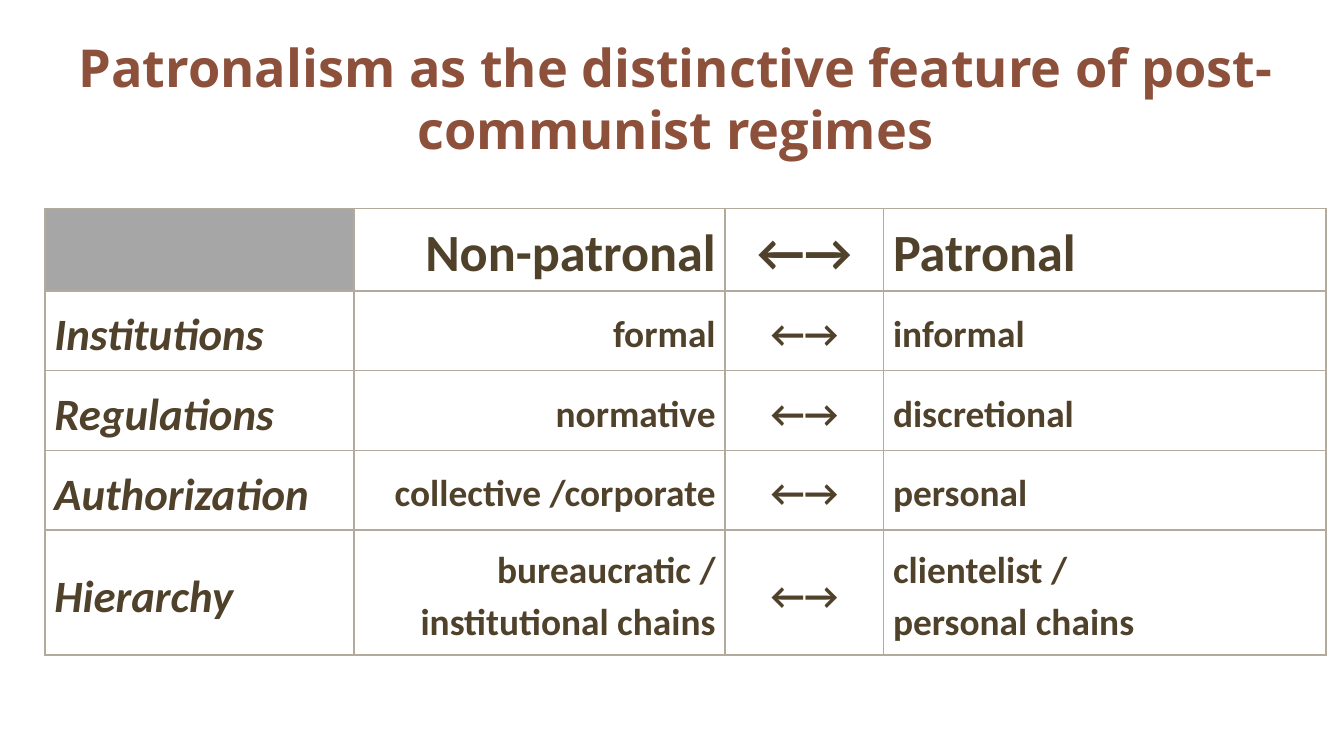
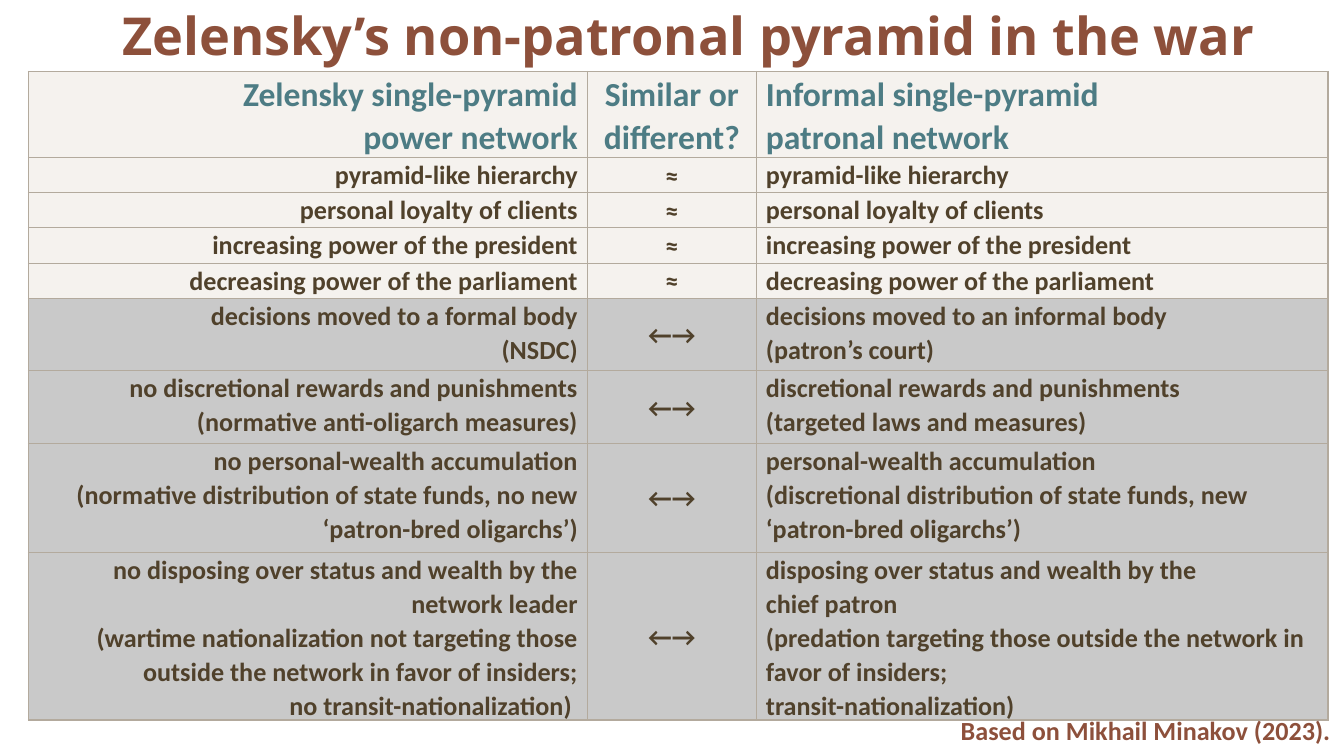
from dataclasses import dataclass
from lxml import etree
from pptx import Presentation
from pptx.dml.color import RGBColor
from pptx.enum.text import MSO_ANCHOR, PP_ALIGN
from pptx.oxml.ns import qn
from pptx.util import Inches, Pt

LEFT, CENTER, RIGHT = PP_ALIGN.LEFT, PP_ALIGN.CENTER, PP_ALIGN.RIGHT
TOP, MIDDLE = MSO_ANCHOR.TOP, MSO_ANCHOR.MIDDLE


@dataclass(frozen=True)
class Theme:
    title_font: str = "Open Sans"
    body_font: str = "Calibri"
    accent: str = "8D503B"
    ink: str = "50412B"
    teal: str = "4D7C84"
    rule: str = "B3AA9D"
    sand: str = "EFEAE4"
    grey: str = "A6A6A6"
    title: int = 28
    label: int = 24
    value: int = 20
    header: int = 18
    small: int = 14


theme = Theme()
prs = Presentation()
prs.slide_width = Inches(10)
prs.slide_height = prs.slide_width * 9 // 16
blank = prs.slide_layouts[6]
U = prs.slide_width / 100


def write(tf, text, size, color, align, font=theme.body_font, italic=False, spacing=None, after=None):
    tf.word_wrap = True
    tf.text = text.replace("\n", "\v")
    p = tf.paragraphs[0]
    p.alignment, p.line_spacing = align, spacing
    if after:
        p.space_after = Pt(after)
    for r in p.runs:
        r.font.name, r.font.size, r.font.bold, r.font.italic = font, Pt(size), True, italic
        r.font.color.rgb = RGBColor.from_string(color)
    for br in p._p.findall(qn("a:br")):
        etree.SubElement(br, qn("a:rPr"), sz=str(size * 100))


def style_cell(cell, fill, alpha, widths):
    cell.margin_left = cell.margin_right = Inches(0.07)
    cell.margin_top = cell.margin_bottom = 0
    if fill:
        cell.fill.solid()
        cell.fill.fore_color.rgb = RGBColor.from_string(fill)
    else:
        cell.fill.background()
    tcPr = cell._tc.get_or_add_tcPr()
    if alpha:
        etree.SubElement(tcPr.find(".//" + qn("a:srgbClr")), qn("a:alpha"), val=str(alpha * 1000))
    for i, (side, width) in enumerate(zip("LRTB", widths)):
        ln = etree.Element(qn("a:ln" + side), w=str(Pt(width)))
        solid = etree.SubElement(ln, qn("a:solidFill"))
        etree.SubElement(solid, qn("a:srgbClr"), val=theme.rule)
        tcPr.insert(i, ln)


features = [
    ("", "Non-patronal", "←→", "Patronal"),
    ("Institutions", "formal", "←→", "informal"),
    ("Regulations", "normative", "←→", "discretional"),
    ("Authorization", "collective /corporate", "←→", "personal"),
    ("Hierarchy", "bureaucratic / institutional chains", "←→", "clientelist /\npersonal chains"),
]
networks = [
    ("Zelensky single-pyramid\npower network", "Similar or different?",
     "Informal single-pyramid\npatronal network"),
    ("pyramid-like hierarchy", "≈", "pyramid-like hierarchy"),
    ("personal loyalty of clients", "≈", "personal loyalty of clients"),
    ("increasing power of the president", "≈", "increasing power of the president"),
    ("decreasing power of the parliament", "≈", "decreasing power of the parliament"),
    ("decisions moved to a formal body\n(NSDC)", "←→",
     "decisions moved to an informal body\n(patron’s court)"),
    ("no discretional rewards and punishments\n(normative anti-oligarch measures)", "←→",
     "discretional rewards and punishments\n(targeted laws and measures)"),
    ("no personal-wealth accumulation\n(normative distribution of state funds, no new ‘patron-bred oligarchs’)",
     "←→",
     "personal-wealth accumulation\n(discretional distribution of state funds, new ‘patron-bred oligarchs’)"),
    ("no disposing over status and wealth by the network leader\n(wartime nationalization not targeting those "
     "outside the network in favor of insiders;\nno transit-nationalization) ", "←→",
     "disposing over status and wealth by the\nchief patron\n(predation targeting those outside the network "
     "in favor of insiders;\ntransit-nationalization)"),
]
pages = [
    ("Patronalism as the distinctive feature of post-communist regimes", (1.8, 2.1, 96.9, 8.7), TOP,
     features, (3.35, 15.5), (23, 27.6, 11.8, 32.9), (6.15, 5.93, 5.93, 5.93, 9.3)),
    ("Zelensky’s non-patronal pyramid in the war", (2.4, 0.6, 97.6, 3.9), MIDDLE,
     networks, (2.1, 5.3), (41.6, 12.6, 42.5), (5.4, 2.62, 2.62, 2.62, 2.62, 5.4, 5.4, 8.1, 7.9)),
]

for title, box, anchor, rows, (left, top), col_widths, row_heights in pages:
    s = prs.slides.add_slide(blank)
    sp = s.shapes.add_textbox(*(int(v * U) for v in box))
    sp.text_frame.vertical_anchor = anchor
    write(sp.text_frame, title, theme.title, theme.accent, CENTER, theme.title_font)

    frame = s.shapes.add_table(len(rows), len(col_widths), int(left * U), int(top * U),
                               int(sum(col_widths) * U), int(sum(row_heights) * U))
    table = frame.table
    table.first_row = table.horz_banding = False
    for column, width in zip(table.columns, col_widths):
        column.width = int(width * U)
    for row, height in zip(table.rows, row_heights):
        row.height = int(height * U)

    for i, texts in enumerate(rows):
        for j, text in enumerate(texts):
            cell = table.cell(i, j)
            align = (LEFT, RIGHT, CENTER, LEFT)[j - len(texts)]
            if rows is features:
                style_cell(cell, None if text else theme.grey, None, (1, 1, 1, 1))
                cell.margin_top = Inches(0.01)
                cell.vertical_anchor = MIDDLE
                size = theme.title if i == 0 else theme.label if j == 0 else theme.value
                if text:
                    write(cell.text_frame, text, size, theme.ink, align,
                          italic=j == 0, spacing=1.15 if i else 1.1)
            else:
                right = 1 if j == len(texts) - 1 else 0.5
                bottom = 1 if i == len(rows) - 1 else 0.5
                style_cell(cell, theme.grey if texts[1] == "←→" else theme.sand, 60, (0.5, right, 0.5, bottom))
                cell.vertical_anchor = MIDDLE if i and j == 1 else TOP
                write(cell.text_frame, text, theme.small if i else theme.header,
                      theme.ink if i else theme.teal, align, spacing=1.07, after=6)

sp = s.shapes.add_textbox(int(59.4 * U), int(52.7 * U), int(40.6 * U), int(3.4 * U))
write(sp.text_frame, "Based on Mikhail Minakov (2023).", theme.small, theme.accent, RIGHT)

prs.save("out.pptx")
